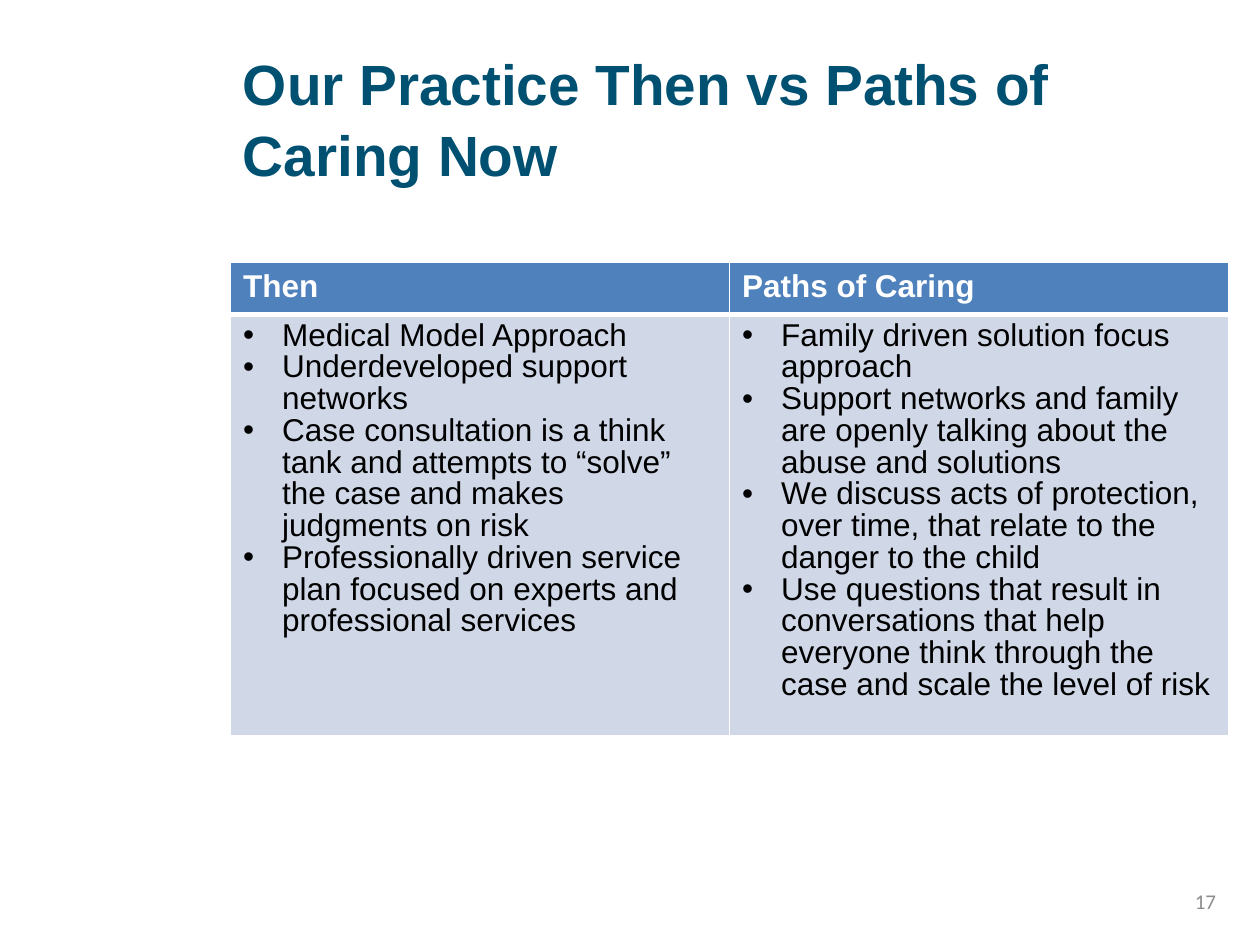
from pptx import Presentation
from pptx.dml.color import RGBColor as Rgb
from pptx.enum.text import MSO_ANCHOR as Anchor, PP_ALIGN as Align
from pptx.oxml.ns import qn
from pptx.util import Inches, Pt
from lxml.etree import SubElement as Sub

WIDE, HIGH = Inches(10), Inches(7.5)
LEFT, SPAN = 0.183, 0.792
THEN = [
    "Medical Model Approach",
    "Underdeveloped support networks",
    "Case consultation is a think tank and attempts to “solve” the case and makes judgments on risk",
    "Professionally driven service plan focused on experts and professional services",
]
NOW = [
    "Family driven solution focus approach",
    "Support networks and family are openly talking about the abuse and solutions",
    "We discuss acts of protection, over time, that relate to the danger to the child",
    "Use questions that result in conversations that help everyone think through the case and scale the level of risk",
]


def tint(code):
    return Rgb.from_string(code)


def place(x, y, w, h):
    return [round(n) for n in (x * WIDE, y * HIGH, w * WIDE, h * HIGH)]


def dot(para):
    props = para._p.get_or_add_pPr()
    props.set("marL", str(Inches(0.31)))
    props.set("indent", str(-Inches(0.31)))
    Sub(props, qn("a:buFont"), typeface="Arial")
    Sub(props, qn("a:buChar"), char="•")


def write(frame, lines, size=18, color="000000", font="Arial", bold=False,
          align=Align.LEFT, space=None, list=False):
    frame.word_wrap = True
    for i, line in enumerate(lines):
        para = frame.paragraphs[0] if i == 0 else frame.add_paragraph()
        if list:
            dot(para)
        para.alignment = align
        para.line_spacing = space
        run = para.add_run()
        run.text = line
        run.font.size = Pt(size)
        run.font.name = font
        run.font.bold = bold
        run.font.color.rgb = tint(color)


def label(slide, box, text, **form):
    frame = slide.shapes.add_textbox(*place(*box)).text_frame
    frame.vertical_anchor = Anchor.MIDDLE
    write(frame, [text], **form)


def edge(cell, base):
    props = cell._tc.get_or_add_tcPr()
    for side in "LRTB":
        width = base if side == "B" else 1
        line = Sub(props, qn(f"a:ln{side}"), w=str(Pt(width)))
        Sub(Sub(line, qn("a:solidFill")), qn("a:srgbClr"), val="FFFFFF")


def paint(cell, lines, fill, base=1, **form):
    edge(cell, base)
    cell.fill.solid()
    cell.fill.fore_color.rgb = tint(fill)
    write(cell.text_frame, lines, **form)


def compare(slide, box, sides):
    shape = slide.shapes.add_table(2, len(sides), *place(*box))
    grid = shape.table
    grid.horz_banding = False
    for row in grid.rows:
        row.height = Inches(0.41)
    shape.height = place(*box)[3]
    for col, (head, items) in enumerate(sides):
        paint(grid.cell(0, col), [head], "4F81BD", base=3,
              color="FFFFFF", bold=True)
        paint(grid.cell(1, col), items, "D0D8E8", space=0.9, list=True)


def main():
    deck = Presentation()
    deck.slide_width, deck.slide_height = WIDE, HIGH
    slide = deck.slides.add_slide(deck.slide_layouts[6])
    label(slide, (LEFT, 0.04, SPAN, 0.167),
          "Our Practice Then vs Paths of Caring Now",
          size=32.4, color="005072", bold=True, space=1.04)
    compare(slide, (LEFT, 0.278, SPAN, 0.54),
            [("Then", THEN), ("Paths of Caring", NOW)])
    label(slide, (0.858, 0.927, 0.117, 0.053), "17",
          size=12, color="8C8C8C", font="Calibri", align=Align.RIGHT)
    deck.save("out.pptx")


if __name__ == "__main__":
    main()
